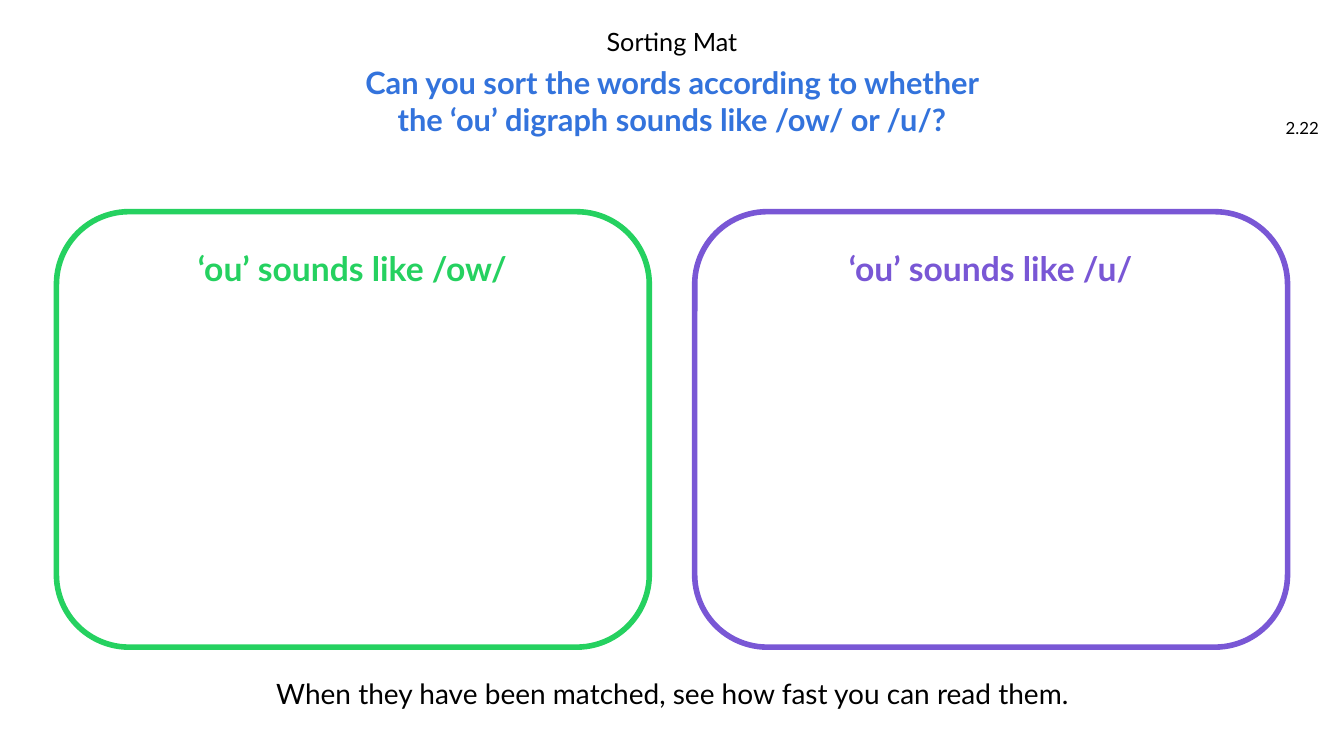
"""Build the sorting mat slide for the two sounds of the 'ou' digraph."""
from dataclasses import dataclass

from pptx import Presentation
from pptx import util as u
from pptx.dml.color import RGBColor
from pptx.enum import shapes, text
from pptx.shapes.autoshape import Shape
from pptx.slide import Slide


@dataclass(frozen=True)
class Theme:
    """Font, colours and type sizes of the slide."""
    font: str = "Lato"
    black: str = "000000"
    blue: str = "3373DC"
    green: str = "25D160"
    purple: str = "7957D5"
    number: int = 12
    title: int = 18
    closing: int = 20
    question: int = 22
    heading: int = 24
    outline: int = 4


@dataclass(frozen=True)
class Box:
    """A rectangle in inches."""
    left: float
    top: float
    width: float
    height: float

    def lengths(self) -> tuple[u.Length, ...]:
        """Return the sides as slide lengths."""
        return tuple(u.Inches(v) for v in (self.left, self.top, self.width, self.height))


@dataclass(frozen=True)
class Label:
    """A piece of text with its place and format."""
    words: str
    box: Box
    size: int
    color: str
    bold: bool = False
    align: text.PP_ALIGN = text.PP_ALIGN.CENTER
    anchor: text.MSO_ANCHOR = text.MSO_ANCHOR.TOP
    spacing: float = 1.0


@dataclass(frozen=True)
class Panel:
    """A sorting area with its heading."""
    heading: str
    color: str


THEME = Theme()
PANEL_LEFT, PANEL_PITCH = 0.56, 6.33
HEADING_INSET = 1.2

TITLE = Label("Sorting Mat", Box(2.31, 0.24, 8.71, 0.35), THEME.title, THEME.black, spacing=0.9)
LABELS = (
    Label("2.22", Box(12.55, 1.07, 0.63, 0.4), THEME.number, THEME.black,
          align=text.PP_ALIGN.RIGHT, anchor=text.MSO_ANCHOR.MIDDLE),
    Label("Can you sort the words according to whether the ‘ou’ digraph sounds like /ow/ or /u/?",
          Box(3.3, 0.58, 6.73, 0.85), THEME.question, THEME.blue, bold=True),
    Label("When they have been matched, see how fast you can read them.",
          Box(0.76, 6.7, 11.82, 0.35), THEME.closing, THEME.black, spacing=0.9),
)
PANELS = (
    Panel("‘ou’ sounds like /ow/", THEME.green),
    Panel("‘ou’ sounds like /u/", THEME.purple),
)


def write_label(sp: Shape, label: Label) -> None:
    """Place a text shape and format its words."""
    sp.left, sp.top, sp.width, sp.height = label.box.lengths()
    tf = sp.text_frame
    tf.text = label.words
    tf.word_wrap = True
    tf.auto_size = text.MSO_AUTO_SIZE.NONE
    tf.vertical_anchor = label.anchor
    p = tf.paragraphs[0]
    p.alignment = label.align
    p.line_spacing = label.spacing
    p.space_before = u.Pt(0)
    font = p.runs[0].font
    font.name = THEME.font
    font.size = u.Pt(label.size)
    font.bold = label.bold
    font.color.rgb = RGBColor.from_string(label.color)


def add_label(s: Slide, label: Label) -> None:
    """Add a text box holding one label."""
    write_label(s.shapes.add_textbox(*label.box.lengths()), label)


def add_panel(s: Slide, panel: Panel, left: float) -> None:
    """Add a rounded outline with its centred heading."""
    sp = s.shapes.add_shape(shapes.MSO_SHAPE.ROUNDED_RECTANGLE,
                            *Box(left, 2.1, 5.88, 4.32).lengths())
    sp.shadow.inherit = False
    sp.fill.background()
    sp.line.color.rgb = RGBColor.from_string(panel.color)
    sp.line.width = u.Pt(THEME.outline)
    heading_box = Box(left + HEADING_INSET, 2.41, 3.47, 0.5)
    add_label(s, Label(panel.heading, heading_box, THEME.heading, panel.color, bold=True))


def main() -> None:
    """Build and save the slide."""
    prs = Presentation()
    prs.slide_width, prs.slide_height = u.Inches(13.33), u.Inches(7.5)
    s = prs.slides.add_slide(prs.slide_layouts[5])
    write_label(s.shapes.title, TITLE)
    for i, panel in enumerate(PANELS):
        add_panel(s, panel, PANEL_LEFT + i * PANEL_PITCH)
    for label in LABELS:
        add_label(s, label)
    prs.save("out.pptx")


if __name__ == "__main__":
    main()
